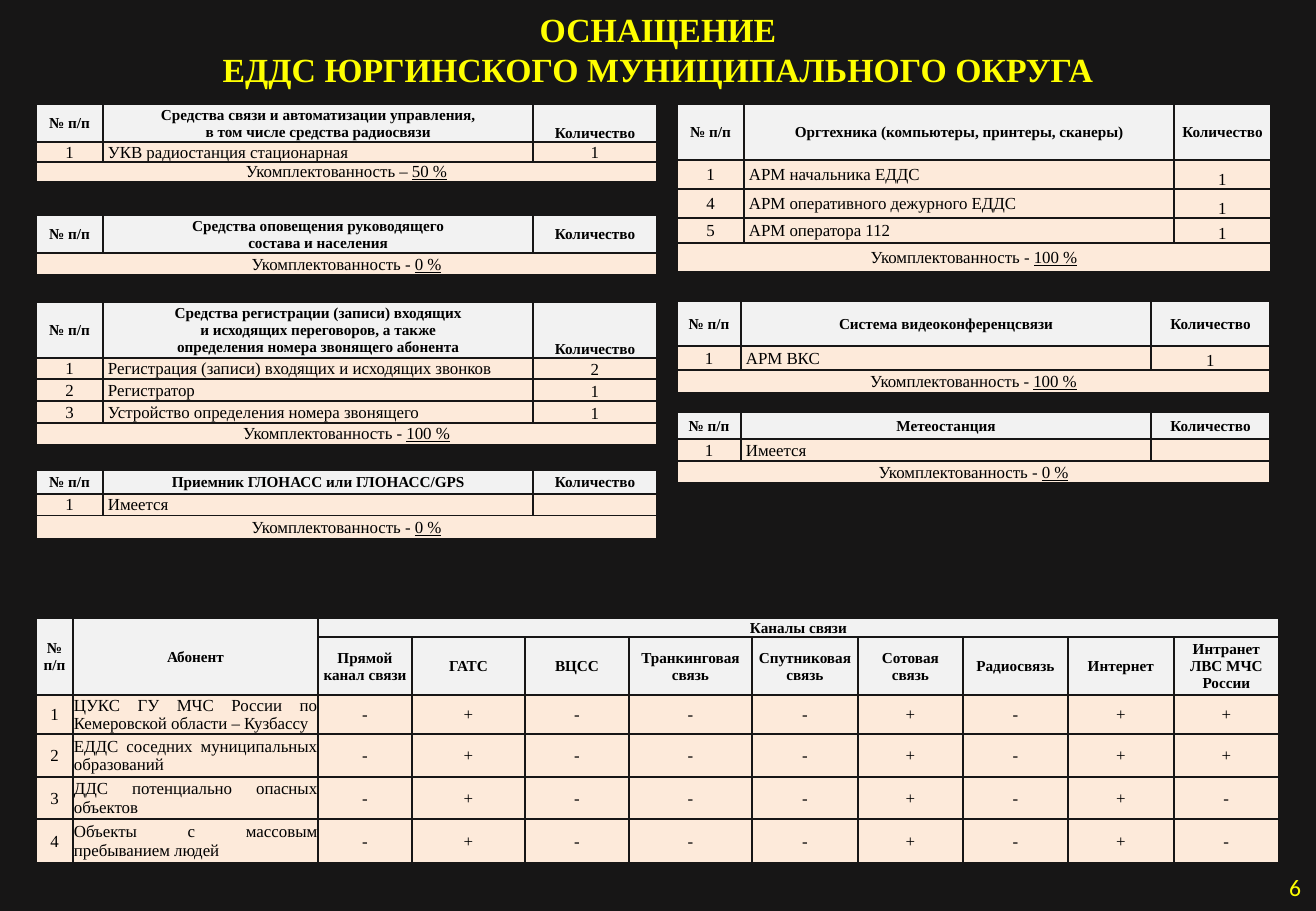
from lxml.etree import SubElement as Sub
from pptx import Presentation
from pptx.dml.color import RGBColor as RGB
from pptx.enum.text import MSO_ANCHOR as Anchor, MSO_AUTO_SIZE as Auto, PP_ALIGN as Align
from pptx.oxml.ns import qn
from pptx.util import Pt

HUES = {"back": "171616", "head": "F2F2F2", "body": "FDEADA", "text": "000000", "mark": "FFFF00"}
SERIF = "Times New Roman"
SCALE = 7526


def px(n):
    return n * SCALE


class Deck:
    def __init__(self, wide, high):
        self.deck = Presentation()
        self.deck.slide_width, self.deck.slide_height = px(wide), px(high)
        self.slide = self.deck.slides.add_slide(self.deck.slide_layouts[5])
        fill = self.slide.background.fill
        fill.solid()
        fill.fore_color.rgb = self.hue("back")

    def hue(self, name):
        return RGB.from_string(HUES[name])

    def style(self, frame, size, hue="text", bold=False, align=Align.CENTER, face=SERIF):
        frame.word_wrap = True
        for para in frame.paragraphs:
            para.alignment = align
            for run in para.runs:
                font = run.font
                font.name, font.size, font.bold = face, Pt(size), bold
                font.color.rgb = self.hue(hue)
            if not para.runs:
                Sub(para._p, qn("a:endParaRPr"), sz=str(size * 100))

    def place(self, shape, x, y, w, h):
        shape.left, shape.top, shape.width, shape.height = map(px, (x, y, w, h))

    def title(self, text, *box):
        shape = self.slide.shapes.title
        self.place(shape, *box)
        frame = shape.text_frame
        frame.text = text
        frame.auto_size = Auto.NONE
        frame.vertical_anchor = Anchor.MIDDLE
        self.style(frame, 20, "mark", True)

    def number(self, text, *box):
        frame = self.slide.shapes.add_textbox(*map(px, box)).text_frame
        frame.text = text
        frame.vertical_anchor = Anchor.MIDDLE
        frame.margin_left = frame.margin_right = px(15)
        self.style(frame, 14, "mark", align=Align.RIGHT, face="Calibri")

    def cell(self, cell, text, head, align=Align.CENTER, inset=1, low=False):
        cell.text_frame.text = text
        cell.margin_left, cell.margin_right = px(inset), px(1)
        cell.margin_top, cell.margin_bottom = px(1), 0
        cell.vertical_anchor = Anchor.BOTTOM if low else Anchor.MIDDLE
        props = cell._tc.get_or_add_tcPr()
        for side in "LRTB":
            line = Sub(props, qn("a:ln" + side), w=str(Pt(1)))
            Sub(Sub(line, qn("a:solidFill")), qn("a:srgbClr"), val=HUES["back"])
        cell.fill.solid()
        cell.fill.fore_color.rgb = self.hue("head" if head else "body")
        self.style(cell.text_frame, 9 if head else 10, bold=head, align=align)

    def grid(self, x, y, cols, rows):
        shape = self.slide.shapes.add_table(
            len(rows), len(cols), px(x), px(y), px(sum(cols)), px(sum(rows)))
        table = shape.table
        table.first_row = table.horz_banding = False
        for col, w in zip(table.columns, cols):
            col.width = px(w)
        for row, h in zip(table.rows, rows):
            row.height = px(h)
        return table

    def stock(self, x, y, cols, rows, name, items, share, dash="-", low=False):
        table = self.grid(x, y, cols, rows)
        for c, text in enumerate(("№ п/п", name, "Количество")):
            self.cell(table.cell(0, c), text, True, low=low and c == 2)
        for r, (num, item, count) in enumerate(items, 1):
            self.cell(table.cell(r, 0), num, False)
            self.cell(table.cell(r, 1), item, False, Align.LEFT, 5)
            self.cell(table.cell(r, 2), count, False, low=True)
        last = len(rows) - 1
        for c in range(3):
            self.cell(table.cell(last, c), "", False)
        total = table.cell(last, 0)
        total.merge(table.cell(last, 2))
        para = total.text_frame.paragraphs[0]
        para.add_run().text = f"Укомплектованность {dash} "
        rate = para.add_run()
        rate.text = share
        rate.font.underline = True
        self.style(total.text_frame, 10)

    def links(self, x, y, cols, rows, heads, users):
        table = self.grid(x, y, cols, rows)
        tops = ["№ п/п", "Абонент", "Каналы связи"] + [""] * (len(heads) - 1)
        for r, line in enumerate((tops, ["", ""] + heads)):
            for c, text in enumerate(line):
                self.cell(table.cell(r, c), text, True)
        for c in range(2):
            table.cell(0, c).merge(table.cell(1, c))
        table.cell(0, 2).merge(table.cell(0, len(cols) - 1))
        for n, (name, marks) in enumerate(users, 1):
            for c, text in enumerate([str(n), name, *marks]):
                align = Align.JUSTIFY if c == 1 else Align.CENTER
                self.cell(table.cell(n + 1, c), text, False, align)

    def save(self):
        self.deck.save("out.pptx")


def main():
    deck = Deck(1316, 911)
    deck.title("ОСНАЩЕНИЕ\vЕДДС ЮРГИНСКОГО МУНИЦИПАЛЬНОГО ОКРУГА", 0, -4, 1316, 106)
    left, right = 36, 677
    main_cols, tech_cols, side_cols = (67, 430, 124), (67, 430, 97), (64, 410, 119)

    deck.stock(left, 104, main_cols, (38, 20, 19),
               "Средства связи и автоматизации управления,\vв том числе средства радиосвязи",
               [("1", "УКВ радиостанция стационарная", "1")], "50 %", "–", low=True)
    deck.stock(right, 104, tech_cols, (56, 29, 29, 25, 29),
               "Оргтехника (компьютеры, принтеры, сканеры)",
               [("1", "АРМ начальника ЕДДС", "1"),
                ("4", "АРМ оперативного дежурного ЕДДС", "1"),
                ("5", "АРМ оператора 112", "1")], "100 %")
    deck.stock(right, 301, side_cols, (45, 24, 23), "Система видеоконференцсвязи",
               [("1", "АРМ ВКС", "1")], "100 %")
    deck.stock(left, 215, main_cols, (38, 22),
               "Средства оповещения руководящего\nсостава и населения", [], "0 %")
    deck.stock(left, 302, main_cols, (56, 21, 22, 22, 22),
               "Средства регистрации (записи) входящих\nи исходящих переговоров, а также\n"
               "определения номера звонящего абонента",
               [("1", "Регистрация (записи) входящих и исходящих звонков", "2"),
                ("2", "Регистратор", "1"),
                ("3", "Устройство определения номера звонящего", "1")], "100 %", low=True)
    deck.stock(right, 412, side_cols, (27, 22, 22), "Метеостанция",
               [("1", "Имеется", "")], "0 %")
    deck.stock(left, 470, main_cols, (24, 21, 23), "Приемник ГЛОНАСС или ГЛОНАСС/GPS",
               [("1", "Имеется", "")], "0 %")
    deck.links(left, 618, (37, 245, 94, 113, 104, 123, 106, 105, 105, 106, 105),
               (19, 58, 39, 43, 42, 44),
               ["Прямой канал связи", "ГАТС", "ВЦСС", "Транкинговая\vсвязь",
                "Спутниковая\vсвязь", "Сотовая\vсвязь", "Радиосвязь", "Интернет",
                "Интранет ЛВС МЧС России"],
               [("ЦУКС ГУ МЧС России по Кемеровской области – Кузбассу", "-+---+-++"),
                ("ЕДДС соседних муниципальных образований", "-+---+-++"),
                ("ДДС потенциально опасных объектов", "-+---+-+-"),
                ("Объекты с массовым пребыванием людей", "-+---+-+-")])
    deck.number("6", 1010, 863, 306, 48)
    deck.save()


if __name__ == "__main__":
    main()
